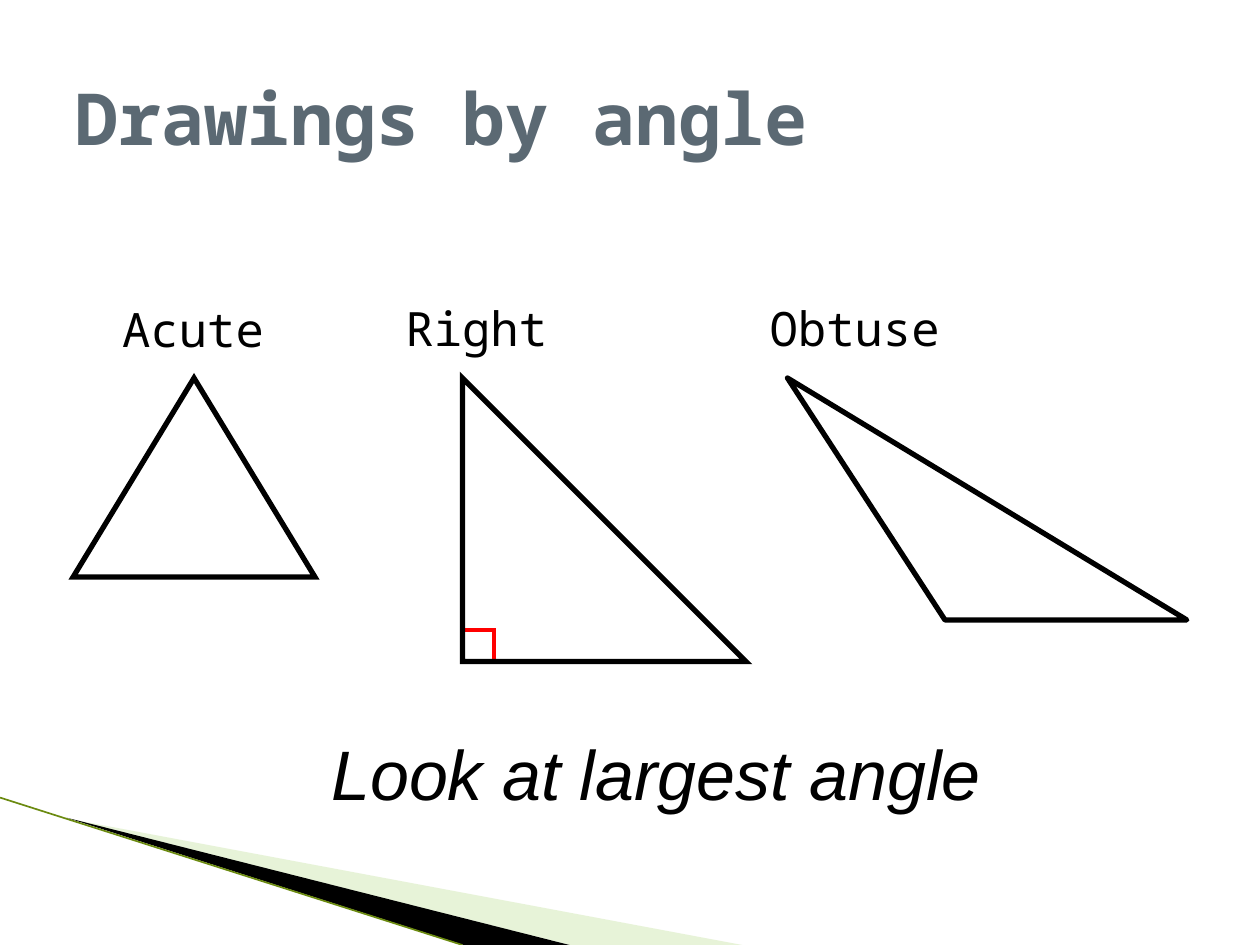
from lxml.etree import SubElement
from pptx import Presentation
from pptx.dml.color import RGBColor
from pptx.enum.shapes import MSO_CONNECTOR, MSO_SHAPE
from pptx.enum.text import MSO_ANCHOR, MSO_AUTO_SIZE, PP_ALIGN
from pptx.oxml.ns import qn
from pptx.util import Inches, Pt

BLACK = RGBColor(0x00, 0x00, 0x00)
RED = RGBColor(0xFF, 0x00, 0x00)
SLATE = RGBColor(0x5B, 0x69, 0x73)
LEAF = RGBColor(0xC5, 0xE1, 0x9F)
OLIVE = RGBColor(0x6B, 0x8A, 0x10)
MONO = "Noto Sans Mono"


def place(sp, box):
    sp.left, sp.top, sp.width, sp.height = [Inches(v) for v in box]


def add_run(p, text, size, name, color, bold=False, italic=False):
    r = p.add_run()
    r.text = text
    r.font.size = Pt(size)
    r.font.name = name
    r.font.color.rgb = color
    r.font.bold = bold
    r.font.italic = italic


def outline(sp, color, width, join="miter"):
    sp.shadow.inherit = False
    sp.fill.background()
    sp.line.color.rgb = color
    sp.line.width = Pt(width)
    SubElement(sp.line._get_or_add_ln(), qn(f"a:{join}"))


def add_polygon(shapes, left, top, points):
    pts = [(Inches(left + x), Inches(top + y)) for x, y in points]
    builder = shapes.build_freeform(*pts[0])
    builder.add_line_segments(pts[1:], close=True)
    return builder.convert_to_shape()


def add_wedge(shapes, left, top, points, color, opacity=100):
    sp = add_polygon(shapes, left, top, points)
    sp.shadow.inherit = False
    sp.line.fill.background()
    sp.fill.solid()
    sp.fill.fore_color.rgb = color
    if opacity < 100:
        clr = sp._element.spPr.find(qn("a:solidFill"))[0]
        SubElement(clr, qn("a:alpha"), val=str(opacity * 1000))


def add_corner(shapes, left, top):
    add_wedge(shapes, left, top, [(0.55, 0.17), (5.89, 1.17), (4.52, 1.17)], LEAF, 40)
    add_wedge(shapes, left, top, [(0.53, 0.16), (4.52, 1.17), (3.68, 1.17)], BLACK)
    edge = shapes.add_connector(MSO_CONNECTOR.STRAIGHT, Inches(left), Inches(top),
                                Inches(left + 3.67), Inches(top + 1.17))
    edge.line.color.rgb = OLIVE
    edge.line.width = Pt(0.95)
    SubElement(edge._element.spPr, qn("a:effectLst"))


def fill_title(sp, box):
    place(sp, box)
    tf = sp.text_frame
    tf.vertical_anchor = MSO_ANCHOR.MIDDLE
    p = tf.paragraphs[0]
    p.alignment = PP_ALIGN.LEFT
    add_run(p, "Drawings by angle", 41, MONO, SLATE, bold=True)


def fill_label(sp, text):
    tf = sp.text_frame
    tf.word_wrap = True
    p = tf.paragraphs[0]
    p.space_before = Pt(0)
    pPr = p._p.get_or_add_pPr()
    pPr.set("marL", "0")
    pPr.set("indent", "0")
    SubElement(pPr, qn("a:buNone"))
    add_run(p, text, 27, MONO, BLACK)


def add_labels(shapes, body, left, top, width=2, height=0.6):
    place(body, (left, top, width, height))
    fill_label(body, "Acute")
    for text, offset in (("Right", 2.25), ("Obtuse", 5.14)):
        box = (left + offset, top, width, height)
        fill_label(shapes.add_textbox(*[Inches(v) for v in box]), text)


def add_acute(shapes, box):
    sp = shapes.add_shape(MSO_SHAPE.ISOSCELES_TRIANGLE, *[Inches(v) for v in box])
    outline(sp, BLACK, 3)


def add_right(shapes, left, top, side, mark=0.25):
    group = shapes.add_group_shape()
    square = group.shapes.add_shape(MSO_SHAPE.RECTANGLE, Inches(left),
                                    Inches(top + side - mark), Inches(mark), Inches(mark))
    outline(square, RED, 2.25)
    triangle = group.shapes.add_shape(MSO_SHAPE.RIGHT_TRIANGLE, Inches(left),
                                      Inches(top), Inches(side), Inches(side))
    outline(triangle, BLACK, 3)


def add_obtuse(shapes, left, top, width, height):
    sp = add_polygon(shapes, left, top, [(0, 0), (1.25, height), (width, height)])
    outline(sp, BLACK, 3, "round")


def add_hint(shapes, box):
    tf = shapes.add_textbox(*[Inches(v) for v in box]).text_frame
    tf.word_wrap = True
    tf.auto_size = MSO_AUTO_SIZE.SHAPE_TO_FIT_TEXT
    p = tf.paragraphs[0]
    p.alignment = PP_ALIGN.CENTER
    add_run(p, "Look at largest angle", 40, "Arial", BLACK, italic=True)


def main():
    prs = Presentation()
    prs.slide_width, prs.slide_height = Inches(10), Inches(7.5)
    s = prs.slides.add_slide(prs.slide_layouts[1])
    add_corner(s.shapes, 0, 6.33)
    add_labels(s.shapes, s.placeholders[1], 0.87, 2.33)
    fill_title(s.shapes.title, (0.5, 0.3, 9, 1.25))
    add_acute(s.shapes, (0.58, 3, 1.92, 1.58))
    add_right(s.shapes, 3.67, 3, 2.25)
    add_obtuse(s.shapes, 6.25, 3, 3.17, 1.92)
    add_hint(s.shapes, (2.33, 5.75, 5.75, 0.77))
    prs.save("out.pptx")


if __name__ == "__main__":
    main()
